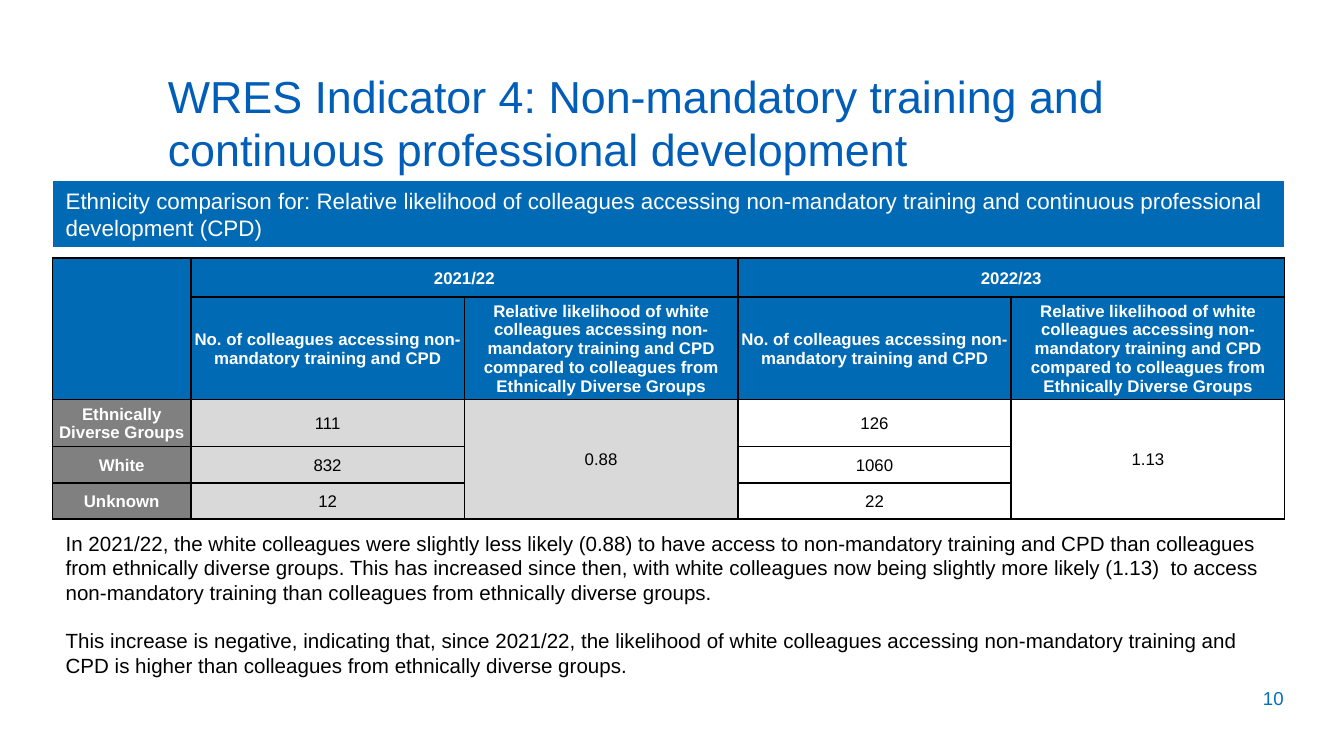
from lxml import etree
from pptx import Presentation
from pptx.dml.color import RGBColor
from pptx.enum.shapes import MSO_SHAPE
from pptx.enum.text import MSO_ANCHOR, PP_ALIGN
from pptx.oxml.ns import qn
from pptx.util import Inches, Pt

LEFT, CENTER, RIGHT = PP_ALIGN.LEFT, PP_ALIGN.CENTER, PP_ALIGN.RIGHT
TOP, MIDDLE = MSO_ANCHOR.TOP, MSO_ANCHOR.MIDDLE
RECTANGLE = MSO_SHAPE.RECTANGLE

TITLE_BLUE = RGBColor(0x00, 0x5E, 0xB8)
NUMBER_BLUE = RGBColor(0x00, 0x70, 0xC0)
HEADER_BLUE = RGBColor(0x00, 0x6A, 0xB4)
LABEL_GREY = RGBColor(0x80, 0x80, 0x80)
PALE_GREY = RGBColor(0xD9, 0xD9, 0xD9)
WHITE = RGBColor(0xFF, 0xFF, 0xFF)
BLACK = RGBColor(0x00, 0x00, 0x00)

FONT = "Arial"
MARGIN, CONTENT_WIDTH = 0.39, 9.17

TITLE = "WRES Indicator 4: Non-mandatory training and continuous professional development"
BANNER = ("Ethnicity comparison for: Relative likelihood of colleagues accessing "
          "non-mandatory training and continuous professional development (CPD)")
FINDINGS = [
    "In 2021/22, the white colleagues were slightly less likely (0.88) to have access to "
    "non-mandatory training and CPD than colleagues from ethnically diverse groups. This has "
    "increased since then, with white colleagues now being slightly more likely (1.13)  to access "
    "non-mandatory training than colleagues from ethnically diverse groups.",
    "This increase is negative, indicating that, since 2021/22, the likelihood of white colleagues "
    "accessing non-mandatory training and CPD is higher than colleagues from ethnically diverse groups.",
]

COUNT_HEADER = "No. of colleagues accessing non-mandatory training and CPD"
RATIO_HEADER = ("Relative likelihood of white colleagues accessing non-mandatory training and CPD "
                "compared to colleagues from Ethnically Diverse Groups")
TABLE_ROWS = [
    ["", "2021/22", "", "2022/23", ""],
    ["", COUNT_HEADER, RATIO_HEADER, COUNT_HEADER, RATIO_HEADER],
    ["Ethnically Diverse Groups", "111", "0.88", "126", "1.13"],
    ["White", "832", "", "1060", ""],
    ["Unknown", "12", "", "22", ""],
]
LABEL_WIDTH = 1.03
COLUMN_WIDTHS = [LABEL_WIDTH] + [(CONTENT_WIDTH - LABEL_WIDTH) / 4] * 4
ROW_HEIGHTS = [0.29, 0.76, 0.35, 0.27, 0.27]
# First and last (row, column) of each merged block
MERGES = [((0, 0), (1, 0)), ((0, 1), (0, 2)), ((0, 3), (0, 4)),
          ((2, 2), (4, 2)), ((2, 4), (4, 4))]
HEADER_ROWS = 2


def write_text(frame, texts, size, color, align=LEFT, bold=False, gap=0):
    """Write one paragraph per text, with a gap between paragraphs."""
    for index, text in enumerate(texts):
        para = frame.add_paragraph() if index else frame.paragraphs[0]
        para.alignment = align
        if index:
            para.space_before = Pt(gap)
        span = para.add_run()
        span.text = text
        span.font.name = FONT
        span.font.size = Pt(size)
        span.font.bold = bold
        span.font.color.rgb = color


def add_text(page, left, top, width, height, texts, size, color, align=LEFT, gap=0, wrap=True):
    box = page.shapes.add_textbox(Inches(left), Inches(top), Inches(width), Inches(height))
    box.text_frame.word_wrap = wrap
    box.text_frame.vertical_anchor = TOP
    write_text(box.text_frame, texts, size, color, align, gap=gap)


def add_banner(page, top, height, text):
    banner = page.shapes.add_shape(RECTANGLE, Inches(MARGIN), Inches(top),
                                   Inches(CONTENT_WIDTH), Inches(height))
    banner.shadow.inherit = False
    banner.fill.solid()
    banner.fill.fore_color.rgb = HEADER_BLUE
    banner.line.color.rgb = WHITE
    banner.line.width = Pt(0.75)
    banner.text_frame.word_wrap = True
    banner.text_frame.vertical_anchor = MIDDLE
    write_text(banner.text_frame, [text], 12, WHITE)


def add_borders(cell):
    properties = cell._tc.get_or_add_tcPr()
    for side in ("a:lnL", "a:lnR", "a:lnT", "a:lnB"):
        line = etree.SubElement(properties, qn(side), w=str(Pt(1)))
        fill = etree.SubElement(line, qn("a:solidFill"))
        etree.SubElement(fill, qn("a:srgbClr"), val=str(BLACK))


def cell_fill(row, column):
    if row < HEADER_ROWS:
        return HEADER_BLUE
    if column == 0:
        return LABEL_GREY
    return PALE_GREY if column <= 2 else WHITE


def format_cell(cell, row, column, text):
    add_borders(cell)
    cell.fill.solid()
    cell.fill.fore_color.rgb = cell_fill(row, column)
    cell.vertical_anchor = MIDDLE
    cell.margin_left = cell.margin_right = cell.margin_top = Inches(0.01)
    cell.margin_bottom = 0
    heading = row < HEADER_ROWS or column == 0
    if text:
        write_text(cell.text_frame, [text], 9, WHITE if heading else BLACK, CENTER, heading)
    else:
        cell.text_frame.paragraphs[0].font.size = Pt(9)


def add_comparison_table(page, top):
    frame = page.shapes.add_table(len(ROW_HEIGHTS), len(COLUMN_WIDTHS), Inches(MARGIN), Inches(top),
                                  Inches(CONTENT_WIDTH), Inches(sum(ROW_HEIGHTS)))
    table = frame.table
    for column, width in zip(table.columns, COLUMN_WIDTHS):
        column.width = Inches(width)
    for row, height in zip(table.rows, ROW_HEIGHTS):
        row.height = Inches(height)
    for row, texts in enumerate(TABLE_ROWS):
        for column, text in enumerate(texts):
            format_cell(table.cell(row, column), row, column, text)
    for first, last in MERGES:
        table.cell(*first).merge(table.cell(*last))


def main():
    deck = Presentation()
    deck.slide_width = Inches(10)
    deck.slide_height = Inches(10 * 9 / 16)
    page = deck.slides.add_slide(deck.slide_layouts[6])

    # Slide number and title
    add_text(page, 9.28, 5.06, 0.37, 0.27, ["10"], 10, NUMBER_BLUE, RIGHT, wrap=False)
    add_text(page, 1.15, 0.46, 8.08, 0.58, [TITLE], 24, TITLE_BLUE)

    # Banner, table and findings
    add_banner(page, 1.34, 0.5, BANNER)
    add_comparison_table(page, 1.92)
    add_text(page, MARGIN, 3.9, CONTENT_WIDTH, 1.21, FINDINGS, 11, BLACK, gap=12.65)

    deck.save("out.pptx")


if __name__ == "__main__":
    main()
